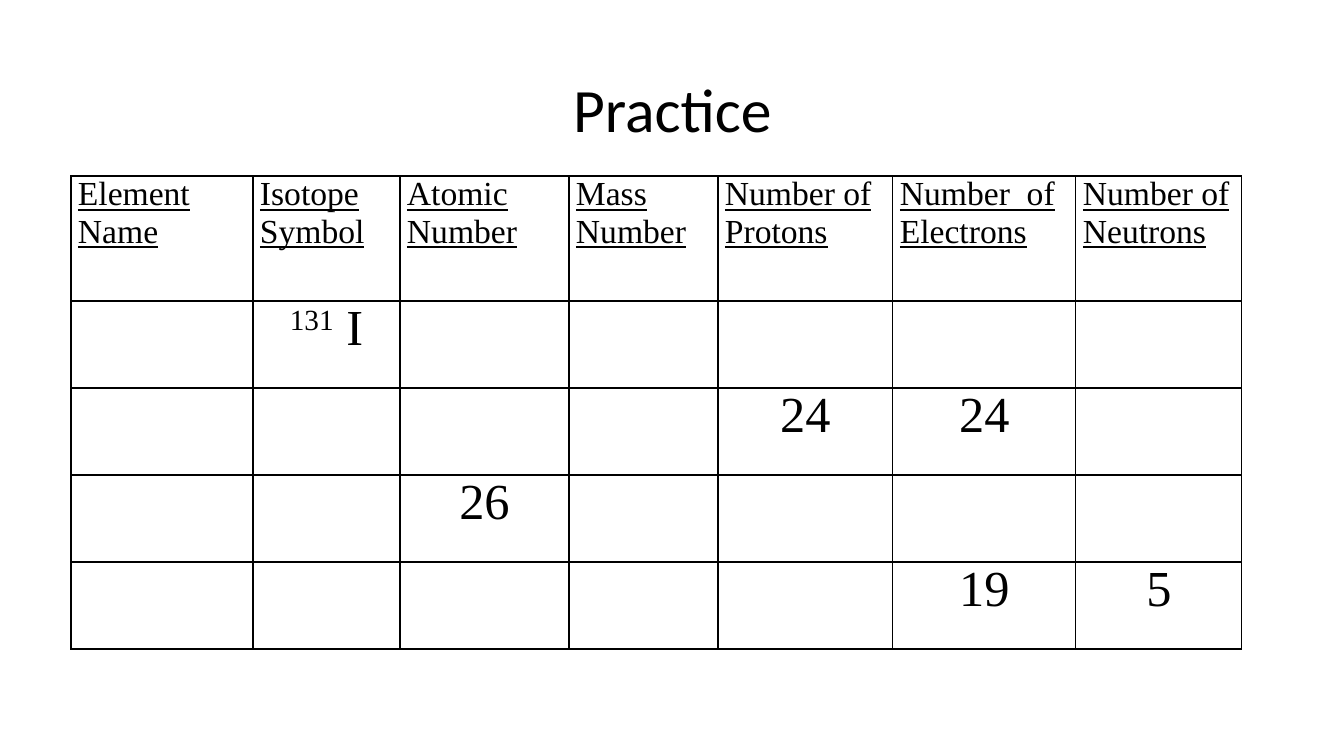
from lxml.etree import SubElement as Sub
from pptx import Presentation
from pptx.dml.color import RGBColor as RGB
from pptx.enum.text import MSO_ANCHOR as Anchor, PP_ALIGN as Align
from pptx.oxml.ns import qn
from pptx.util import Pt

SCALE = 914400 / 100.8
HUES = {"ink": "000000"}


def px(n):
    return round(n * SCALE)


def write(para, text, size=36, font="Times New Roman", line=False,
          align=Align.CENTER, after=6, lift=0):
    para.alignment = align
    para.space_after = Pt(after)
    run = para.add_run()
    run.text = text
    run.font.size = Pt(size)
    run.font.name = font
    run.font.underline = line
    run.font.color.rgb = RGB.from_string(HUES["ink"])
    if lift:
        run.font._element.set("baseline", str(lift * 1000))


deck = Presentation()
deck.slide_width, deck.slide_height = px(1344), px(756)
slide = deck.slides.add_slide(deck.slide_layouts[6])

title = slide.shapes.add_textbox(px(93), px(40), px(1159), px(146)).text_frame
title.word_wrap = True
title.vertical_anchor = Anchor.MIDDLE
title.paragraphs[0].line_spacing = 0.9
write(title.paragraphs[0], "Practice", size=44, font="Calibri", after=0)

heads = ["Element Name", "Isotope Symbol", "Atomic Number", "Mass Number",
         "Number of Protons", "Number  of Electrons", "Number of Neutrons"]
widths = [182, 147, 169, 149, 175, 183, 166]
heights = [125] + [87] * 4
values = {(2, 4): "24", (2, 5): "24", (3, 2): "26", (4, 5): "19", (4, 6): "5"}

grid = slide.shapes.add_table(len(heights), len(widths), px(71), px(176),
                              px(sum(widths)), px(sum(heights))).table
grid.first_row = grid.horz_banding = False
for col, width in zip(grid.columns, widths):
    col.width = px(width)
for row, height in zip(grid.rows, heights):
    row.height = px(height)

for cell in grid.iter_cells():
    cell.margin_left = cell.margin_right = px(7)
    cell.margin_top = cell.margin_bottom = 0
    props = cell._tc.get_or_add_tcPr()
    for side in ("lnL", "lnR", "lnT", "lnB"):
        edge = Sub(props, qn("a:" + side), w=str(Pt(1)))
        fill = Sub(edge, qn("a:solidFill"))
        Sub(fill, qn("a:srgbClr"), val=HUES["ink"])
    cell.fill.background()

for c, head in enumerate(heads):
    write(grid.cell(0, c).text_frame.paragraphs[0], head, size=24,
          line=True, align=Align.LEFT)
for (r, c), value in values.items():
    write(grid.cell(r, c).text_frame.paragraphs[0], value)
symbol = grid.cell(1, 1).text_frame.paragraphs[0]
write(symbol, "131", lift=30)
write(symbol, " I")

deck.save("out.pptx")
